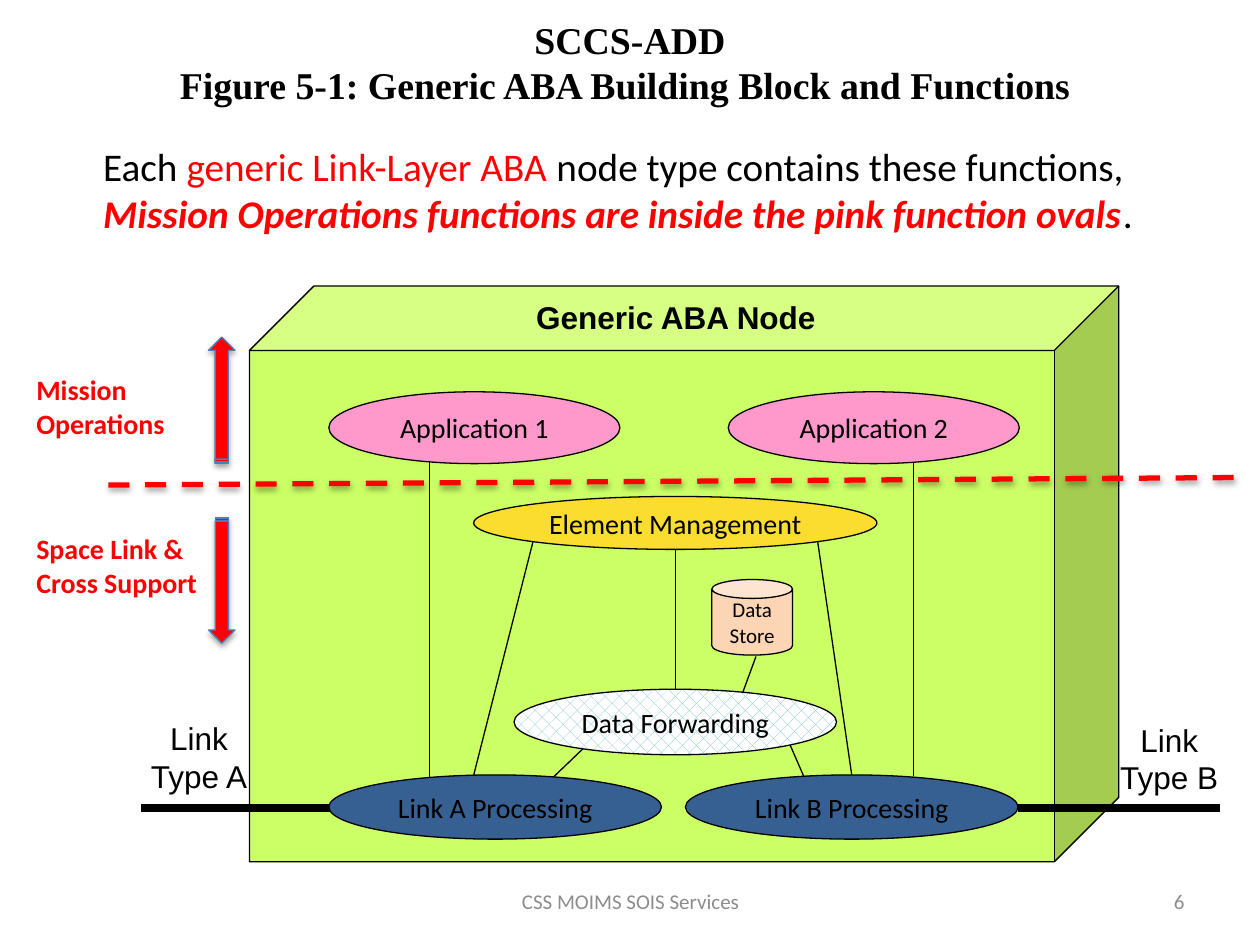
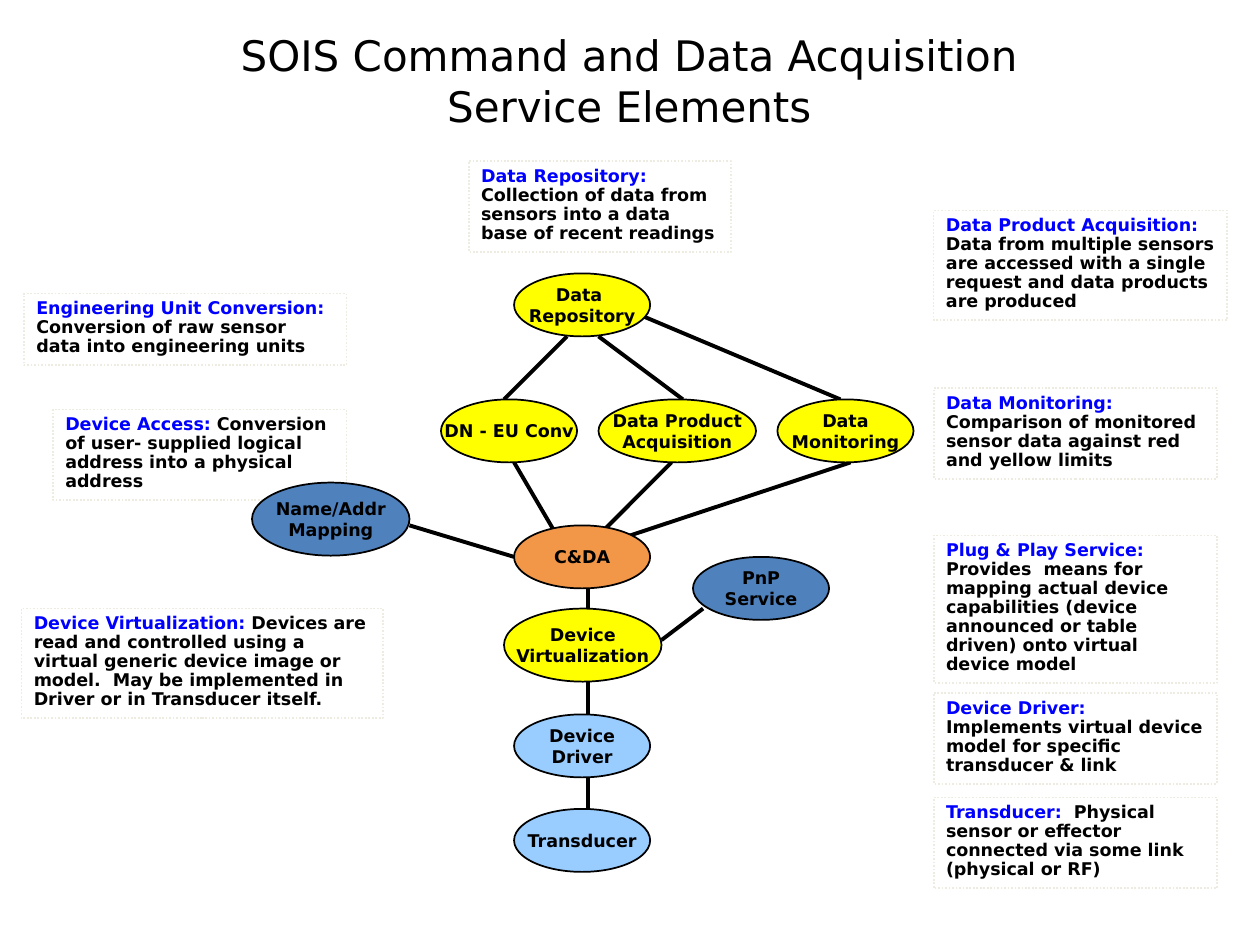
from lxml import etree
from pptx import Presentation
from pptx import util as u
from pptx.dml.color import RGBColor
from pptx.enum import dml, shapes, text
from pptx.oxml import ns

Inches = u.Inches
SHAPE = shapes.MSO_SHAPE
LEFT, CENTER, RIGHT = text.PP_ALIGN.LEFT, text.PP_ALIGN.CENTER, text.PP_ALIGN.RIGHT
TOP, MIDDLE = text.MSO_ANCHOR.TOP, text.MSO_ANCHOR.MIDDLE

COLORS = {
    "black": "000000", "white": "FFFFFF", "red": "FF0000", "blue": "0000FF",
    "gray": "8C8C8C", "lime": "CCFF66", "pink": "FF99CC", "gold": "FBDD30",
    "peach": "FCD5B5", "teal": "72BFC5", "navy": "376092", "edge": "4B7EBC",
    "orange": "F29648", "steel": "4F81BD", "yellow": "FFFF00", "sky": "99CCFF",
    "cream": "EEECE1",
}


def rgb(name):
    return RGBColor.from_string(COLORS[name])


def add_effects(shape, shadow=None):
    """Replace the theme shadow by none, or by (opacity %, blur pt, distance pt)."""
    effects = etree.SubElement(shape._element.spPr, ns.qn("a:effectLst"))
    if shadow:
        opacity, blur, distance = shadow
        outer = etree.SubElement(
            effects, ns.qn("a:outerShdw"), blurRad=str(u.Pt(blur)),
            dist=str(u.Pt(distance)), dir="5400000", rotWithShape="0")
        color = etree.SubElement(outer, ns.qn("a:srgbClr"), val=COLORS["black"])
        etree.SubElement(color, ns.qn("a:alpha"), val=str(opacity * 1000))


class Deck:
    def __init__(self, prs):
        self.prs = prs
        self.slide = None
        self.font = "Calibri"
        self.size = 16
        self.line_width = 0.75
        self.bold = False

    def new_slide(self, title, at, size, title_font, bold=False):
        self.slide = self.prs.slides.add_slide(self.prs.slide_layouts[5])
        s = self.slide.shapes.title
        s.left, s.top, s.width, s.height = map(Inches, at)
        self.set_text(s, [title], size=size, font=title_font, bold=bold,
                      align=CENTER, anchor=MIDDLE)

    def set_text(self, s, lines, size=None, color="black", font=None, bold=None,
                 align=LEFT, anchor=TOP, inset=None, wrap=True, spacing=None):
        """Fill a shape; a line is a string or a list of (text, colour, emphasis)."""
        tf = s.text_frame
        tf.word_wrap = wrap
        tf.auto_size = text.MSO_AUTO_SIZE.NONE
        tf.vertical_anchor = anchor
        if inset is not None:
            tf.margin_left = tf.margin_right = Inches(inset)
            tf.margin_top = tf.margin_bottom = Inches(inset)
        for i, line in enumerate(lines):
            p = tf.add_paragraph() if i else tf.paragraphs[0]
            p.alignment = align
            if spacing:
                p.line_spacing = spacing
            p.font.name = font or self.font
            p.font.size = u.Pt(size or self.size)
            p.font.bold = self.bold if bold is None else bold
            p.font.color.rgb = rgb(color)
            if isinstance(line, str):
                p.text = line
                # Shape styles carry a font colour of their own
                for r in p.runs:
                    r.font.color.rgb = rgb(color)
                continue
            for words, run_color, emphasis in line:
                r = p.add_run()
                r.text = words
                r.font.color.rgb = rgb(run_color)
                if emphasis:
                    r.font.bold = r.font.italic = True

    def label(self, lines, at, **style):
        s = self.slide.shapes.add_textbox(*map(Inches, at))
        self.set_text(s, lines, **style)

    def shape(self, kind, at, fill=None, line="black", shadow=None):
        s = self.slide.shapes.add_shape(kind, *map(Inches, at))
        if shadow:
            add_effects(s, shadow)
        else:
            s.shadow.inherit = False
        if fill:
            s.fill.solid()
            s.fill.fore_color.rgb = rgb(fill)
        else:
            s.fill.background()
        s.line.color.rgb = rgb(line)
        s.line.width = u.Pt(self.line_width)
        return s

    def node(self, lines, at, fill, kind=SHAPE.OVAL, **style):
        s = self.shape(kind, at, fill)
        self.set_text(s, lines, align=CENTER, anchor=MIDDLE, wrap=False, **style)
        return s

    def note(self, term, meaning, at):
        s = self.shape(SHAPE.RECTANGLE, at, line="cream")
        s.line.dash_style = dml.MSO_LINE.ROUND_DOT
        self.set_text(s, [[(term, "blue", False), (meaning, "black", False)]],
                      spacing=0.9)

    def line(self, x1, y1, x2, y2, color="black", width=None, dash=None, shadow=None):
        c = self.slide.shapes.add_connector(
            shapes.MSO_CONNECTOR.STRAIGHT, *map(Inches, (x1, y1, x2, y2)))
        c.line.color.rgb = rgb(color)
        c.line.width = u.Pt(width or self.line_width)
        if dash:
            c.line.dash_style = dash
        add_effects(c, shadow)

    def footer(self, words, number):
        self.label([words], (3.42, 6.95, 3.17, 0.4), size=12, color="gray",
                   align=CENTER, anchor=MIDDLE)
        self.label([number], (7.17, 6.95, 2.33, 0.4), size=12, color="gray",
                   align=RIGHT, anchor=MIDDLE)


def build_aba_node(deck):
    deck.new_slide(
        "SCCS-ADD\vFigure 5‑1: Generic ABA Building Block and Functions ",
        (0.5, 0.1, 9, 0.78), 21.6, "Times New Roman", bold=True)
    deck.label([[
        ("Each ", "black", False),
        ("generic Link-Layer ABA ", "red", False),
        ("node type contains these functions, ", "black", False),
        ("Mission Operations functions are inside the pink function ovals", "red", True),
        (".", "black", False),
    ]], (0.72, 1.08, 8.5, 0.71), size=22.4)

    cube = deck.shape(SHAPE.CUBE, (1.98, 2.27, 6.9, 4.57), "lime")
    cube.adjustments[0] = 0.112
    deck.label(["Generic ABA Node"], (3.96, 2.32, 2.81, 0.44), size=18,
               font="Arial", bold=True, align=CENTER)

    for ends in [
        (4.64, 5.93, 4.39, 6.17), (6.27, 5.91, 6.4, 6.21),
        (3.41, 3.66, 3.41, 6.26), (7.25, 3.66, 7.25, 6.16),
        (4.23, 4.3, 3.76, 6.15), (6.49, 4.3, 6.76, 6.15),
        (5.36, 4.36, 5.36, 5.47), (6, 5.21, 5.89, 5.51),
    ]:
        deck.line(*ends)
    for x1, x2 in [(1.12, 2.62), (8.08, 9.68)]:
        deck.line(x1, 6.41, x2, 6.41, width=4.5)

    for words, at, fill in [
        ("Application 1", (2.61, 3.11, 2.31, 0.57), "pink"),
        ("Application 2", (5.78, 3.11, 2.31, 0.57), "pink"),
        ("Element Management", (3.76, 3.94, 3.2, 0.42), "gold"),
        ("Link A Processing", (2.61, 6.15, 2.64, 0.51), "navy"),
        ("Link B Processing", (5.44, 6.15, 2.64, 0.51), "navy"),
    ]:
        deck.node([words], at, fill, inset=0)
    deck.node(["Data", "Store"], (5.65, 4.6, 0.64, 0.6), "peach", SHAPE.CAN,
              size=12, inset=0)
    forwarding = deck.node(["Data Forwarding"], (4.08, 5.47, 2.56, 0.52), "white",
                           inset=0)
    forwarding.fill.patterned()
    forwarding.fill.pattern = dml.MSO_PATTERN.PERCENT_25
    forwarding.fill.fore_color.rgb = rgb("teal")
    forwarding.fill.back_color.rgb = rgb("white")

    for words, x, y in [("Link Type A", 1.03, 5.66), ("Link Type B", 8.73, 5.67)]:
        deck.label([words], (x, y, 1.1, 0.74), size=18, font="Arial", align=CENTER)

    deck.line(0.86, 3.85, 9.83, 3.79, "red", 3, dml.MSO_LINE.DASH, (38, 3.1, 1.6))
    for lines, label_top, arrow_top, rotation in [
        (["Mission", "Operations"], 2.91, 3.07, 270),
        (["Space Link &", "Cross Support"], 4.17, 4.5, 90),
    ]:
        deck.label(lines, (0.19, label_top, 1.5, 0.64), color="red", bold=True)
        arrow = deck.shape(SHAPE.STRIPED_RIGHT_ARROW, (1.26, arrow_top, 1, 0.21),
                           "red", "edge", (35, 3.1, 1.8))
        arrow.rotation = rotation
    deck.footer("CSS MOIMS SOIS Services", "6")


def build_service_elements(deck):
    deck.font, deck.size, deck.bold, deck.line_width = "DejaVu Sans", 10, True, 1
    deck.new_slide("SOIS Command and Data Acquisition Service Elements",
                   (1.33, 0.15, 7.33, 0.97), 24, deck.font)

    for term, meaning, at in [
        ("Data Repository:",
         " Collection of data from sensors into a data base of recent readings",
         (3.72, 1.28, 2.08, 0.72)),
        ("Engineering Unit Conversion:",
         "  Conversion of raw sensor data into engineering units",
         (0.19, 2.33, 2.56, 0.57)),
        ("Device Access:",
         " Conversion of user- supplied logical address into a physical address",
         (0.42, 3.25, 2.33, 0.72)),
        ("Device Virtualization:",
         " Devices are read and controlled using a virtual generic device image "
         "or model.  May be implemented in Driver or in Transducer itself.",
         (0.17, 4.83, 2.87, 0.87)),
        ("Data Product Acquisition:",
         " Data from multiple sensors are accessed with a single request and data "
         "products are produced",
         (7.41, 1.67, 2.33, 0.87)),
        ("Data Monitoring:",
         " Comparison of monitored sensor data against red and yellow limits",
         (7.41, 3.08, 2.25, 0.72)),
        ("Plug & Play Service:",
         " Provides  means for mapping actual device capabilities (device "
         "announced or table driven) onto virtual device model",
         (7.41, 4.25, 2.25, 1.17)),
        ("Device Driver:",
         " Implements virtual device model for specific transducer & link",
         (7.41, 5.5, 2.25, 0.72)),
        ("Transducer:",
         "  Physical sensor or effector connected via some link (physical or RF)",
         (7.41, 6.33, 2.25, 0.72)),
    ]:
        deck.note(term, meaning, at)

    for ends in [
        (4.5, 2.67, 4, 3.17), (4.75, 2.67, 5.42, 3.17), (5.08, 2.5, 6.67, 3.17),
        (4.08, 3.67, 4.42, 4.25), (5.33, 3.67, 4.75, 4.25), (6.75, 3.67, 5, 4.25),
        (4.67, 4.67, 4.67, 6.42), (4.08, 4.42, 3.25, 4.17), (5.58, 4.83, 5.25, 5.08),
    ]:
        deck.line(*ends, width=2.25)

    small, wide, large = (1.08, 0.5), (1.25, 0.5), (1.25, 0.58)
    for lines, corner, size, fill in [
        (["Data ", "Repository"], (4.08, 2.17), small, "yellow"),
        (["DN - EU Conv"], (3.5, 3.17), small, "yellow"),
        (["Data Product", "Acquisition"], (4.75, 3.17), wide, "yellow"),
        (["Data", "Monitoring"], (6.17, 3.17), small, "yellow"),
        (["Name/Addr", "Mapping"], (2, 3.83), large, "steel"),
        (["C&DA"], (4.08, 4.17), small, "orange"),
        (["PnP", "Service"], (5.5, 4.42), small, "steel"),
        (["Device", "Virtualization"], (4, 4.83), large, "yellow"),
        (["Device", "Driver"], (4.08, 5.67), small, "sky"),
        (["Transducer"], (4.08, 6.42), small, "sky"),
    ]:
        deck.node(lines, corner + size, fill)


def main():
    prs = Presentation()
    prs.slide_width, prs.slide_height = Inches(10), Inches(7.5)
    deck = Deck(prs)
    build_aba_node(deck)
    build_service_elements(deck)
    prs.save("out.pptx")


if __name__ == "__main__":
    main()
